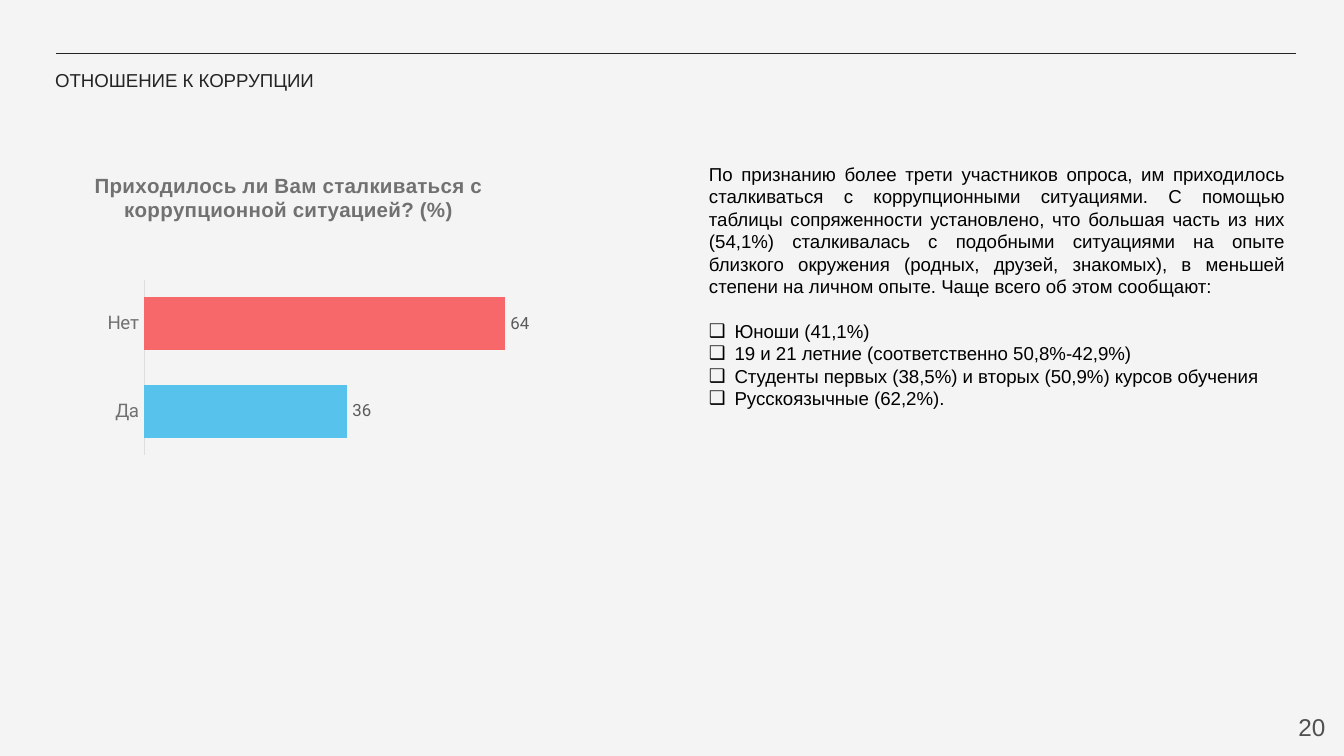
"""Build the survey slide on attitudes to corruption, with a bar chart and findings."""
from dataclasses import dataclass

from lxml.etree import SubElement
from pptx import Presentation
from pptx.chart.data import CategoryChartData
from pptx.dml.color import RGBColor
from pptx.enum.chart import XL_CHART_TYPE as ChartType, XL_LABEL_POSITION as LabelPosition
from pptx.enum.chart import XL_TICK_LABEL_POSITION as TickLabels, XL_TICK_MARK as TickMark
from pptx.enum.shapes import MSO_CONNECTOR as Connector
from pptx.enum.text import MSO_ANCHOR as Anchor, MSO_AUTO_SIZE as AutoSize, PP_ALIGN as Align
from pptx.oxml.ns import qn
from pptx.util import Inches, Pt


@dataclass(frozen=True)
class Theme:
    font: str = "Arial"
    chart_font: str = "Roboto"
    background: str = "F4F4F4"
    ink: str = "242424"
    body: str = "000000"
    number: str = "505050"
    muted: str = "717171"
    label: str = "5B5B5B"
    axis: str = "DEDEDE"
    yes: str = "57C2EC"
    no: str = "F7686B"
    text_size: float = 10
    chart_title_size: float = 11
    label_size: float = 9
    number_size: float = 13


def style(font, size, color, name, bold=False):
    font.size, font.name, font.bold = Pt(size), name, bold
    font.color.rgb = RGBColor.from_string(color)


def set_layout(parent, index, **shares):
    for old in parent.findall(qn("c:layout")):
        parent.remove(old)
    layout = SubElement(parent, qn("c:layout"))
    parent.insert(index, layout)
    manual = SubElement(layout, qn("c:manualLayout"))
    for tag, value in shares.items():
        SubElement(manual, qn(f"c:{tag}")).set("val", str(value))


theme = Theme()
presentation = Presentation()
presentation.slide_width, presentation.slide_height = Inches(10), Inches(10 * 9 / 16)
column, row = presentation.slide_width / 100, presentation.slide_height / 100
slide = presentation.slides.add_slide(presentation.slide_layouts[1])
slide.background.fill.solid()
slide.background.fill.fore_color.rgb = RGBColor.from_string(theme.background)

title, body = slide.placeholders
number = slide.shapes.add_textbox(0, 0, column, row)
frames = [
    (title, (1.6, 7.2, 39.7, 6.75), (0.25, 0.1), Anchor.MIDDLE),
    (body, (51.75, 20.62, 44.8, 34.67), (0.1, 0.05), Anchor.TOP),
    (number, (93.6, 92.27, 6, 7.64), (0.1, 0.1), Anchor.MIDDLE),
]
for shape, (left, top, width, height), (side, edge), anchor in frames:
    shape.left, shape.width = int(left * column), int(width * column)
    shape.top, shape.height = int(top * row), int(height * row)
    frame = shape.text_frame
    frame.word_wrap, frame.auto_size, frame.vertical_anchor = True, AutoSize.NONE, anchor
    frame.margin_left, frame.margin_right = Inches(side), Inches(0.1)
    frame.margin_top = frame.margin_bottom = Inches(edge)

rule = slide.shapes.add_connector(
    Connector.STRAIGHT, int(4.15 * column), int(7.11 * row), int(96.4 * column), int(7.11 * row))
rule.line.color.rgb = RGBColor.from_string(theme.ink)
rule.line.width = Pt(0.75)
SubElement(rule._element.spPr, qn("a:effectLst"))

lines = [
    (title, "ОТНОШЕНИЕ К КОРРУПЦИИ", Align.LEFT, theme.text_size, theme.ink),
    (number, "20", Align.RIGHT, theme.number_size, theme.number),
]
for shape, text, alignment, size, color in lines:
    paragraph = shape.text_frame.paragraphs[0]
    paragraph.alignment = alignment
    run = paragraph.add_run()
    run.text = text
    style(run.font, size, color, theme.font)

findings = [
    "По признанию более трети участников опроса, им приходилось сталкиваться с "
    "коррупционными ситуациями. С помощью таблицы сопряженности установлено, что большая "
    "часть из них (54,1%) сталкивалась с подобными ситуациями на опыте близкого окружения "
    "(родных, друзей, знакомых), в меньшей степени на личном опыте. Чаще всего об этом сообщают:",
    "Юноши (41,1%)",
    "19 и 21 летние (соответственно 50,8%-42,9%)",
    "Студенты первых (38,5%) и вторых (50,9%) курсов обучения",
    "Русскоязычные (62,2%).",
]
for index, text in enumerate(findings):
    paragraph = body.text_frame.add_paragraph() if index else body.text_frame.paragraphs[0]
    paragraph.alignment = Align.JUSTIFY
    paragraph.space_before = Pt(12 if index == 1 else 0)
    properties = paragraph._p.get_or_add_pPr()
    indent = Inches(0.19) if index else 0
    properties.set("marL", str(indent))
    properties.set("indent", str(-indent))
    if index:
        bullet_color = SubElement(properties, qn("a:buClr"))
        SubElement(bullet_color, qn("a:srgbClr")).set("val", theme.body)
        SubElement(properties, qn("a:buChar")).set("char", "❑")
    else:
        SubElement(properties, qn("a:buNone"))
    run = paragraph.add_run()
    run.text = text
    style(run.font, theme.text_size, theme.body, theme.font)

data = CategoryChartData()
data.categories = ["Да", "Нет"]
data.add_series("Series 1", [36, 64])
chart = slide.shapes.add_chart(
    ChartType.BAR_CLUSTERED, int(1.6 * column), int(20.62 * row),
    int(39.7 * column), int(40 * row), data).chart
style(chart.font, theme.text_size, theme.ink, theme.font)
chart.has_legend = False
chart.has_title = True
run = chart.chart_title.text_frame.paragraphs[0].add_run()
run.text = "Приходилось ли Вам сталкиваться с коррупционной ситуацией? (%)"
style(run.font, theme.chart_title_size, theme.muted, theme.font, bold=True)
set_layout(chart.chart_title._element, 1, xMode="edge", yMode="edge", x=0.13, y=0.04)
set_layout(chart._chartSpace.chart.plotArea, 0, layoutTarget="inner", xMode="edge",
           yMode="edge", x=0.23, y=0.41, w=0.74, h=0.58)

categories, values = chart.category_axis, chart.value_axis
categories.major_tick_mark = categories.minor_tick_mark = TickMark.NONE
categories.tick_label_position = TickLabels.NEXT_TO_AXIS
categories.tick_labels.offset = 0
style(categories.tick_labels.font, theme.text_size, theme.muted, theme.chart_font)
categories.format.line.color.rgb = RGBColor.from_string(theme.axis)
categories.format.line.width = Pt(0.75)
values.minimum_scale, values.maximum_scale = 0, 70
values.major_tick_mark = values.minor_tick_mark = TickMark.NONE
values.has_major_gridlines = values.visible = False

plot = chart.plots[0]
plot.gap_width, plot.vary_by_categories = 66, False
for index, color in enumerate([theme.yes, theme.no]):
    fill = plot.series[0].points[index].format.fill
    fill.solid()
    fill.fore_color.rgb = RGBColor.from_string(color)
plot.has_data_labels = True
labels = plot.data_labels
labels.show_value, labels.position = True, LabelPosition.OUTSIDE_END
style(labels.font, theme.label_size, theme.label, theme.chart_font)

presentation.save("out.pptx")
